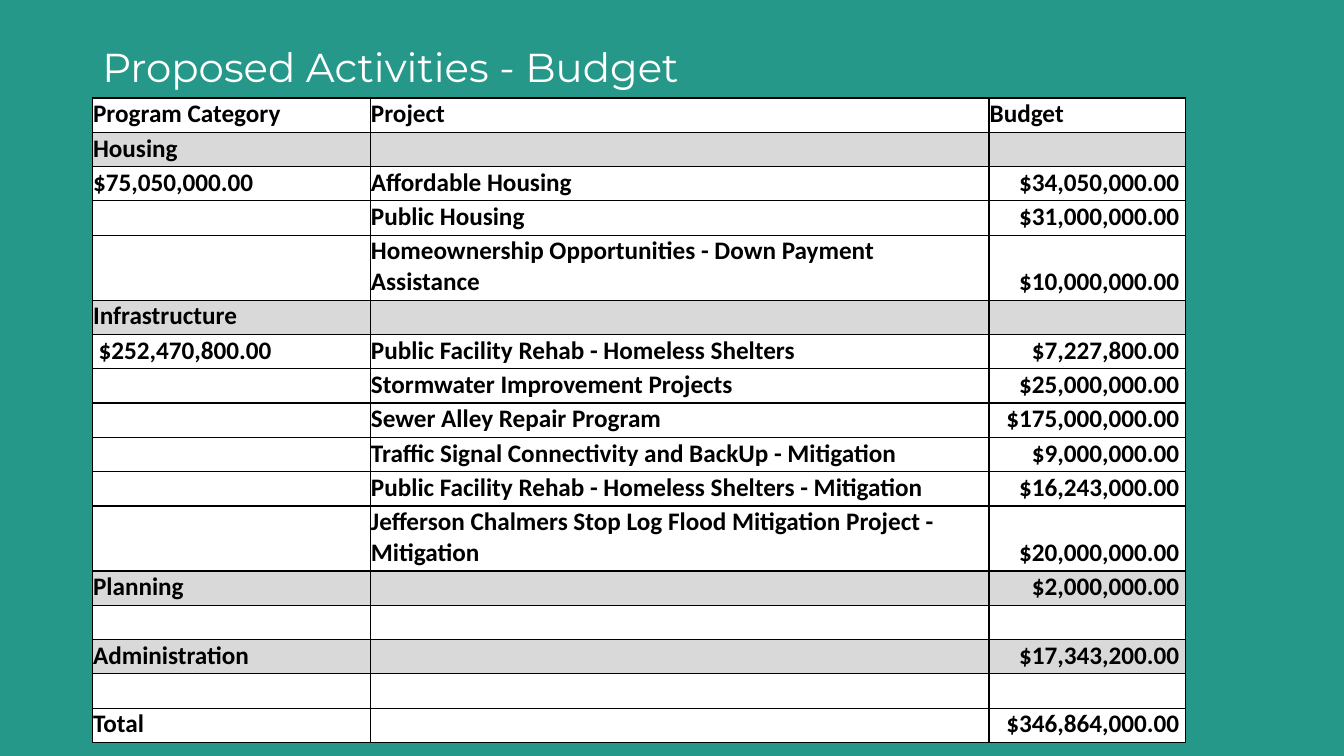
from lxml.etree import SubElement
from pptx import Presentation
from pptx.dml.color import RGBColor
from pptx.enum.text import MSO_ANCHOR as Anchor, MSO_AUTO_SIZE as AutoSize, PP_ALIGN as Align
from pptx.oxml.ns import qn
from pptx.util import Pt

EMU_PER_PX = 6350  # 1920 x 1080 px on a 13.33 x 7.5 inch slide
TEAL, WHITE, GREY, BLACK = "269889", "FFFFFF", "D9D9D9", "000000"

COLUMN_WIDTHS = (397, 884, 281)
LINE_ROW, TWO_LINE_ROW = 49, 93
TWO_LINE_ROWS = {4, 11}
SECTIONS = {"Housing", "Infrastructure", "Planning", "Administration"}
BUDGET = [
    ("Program Category", "Project", "Budget"),
    ("Housing", "", ""),
    ("$75,050,000.00", "Affordable Housing", "$34,050,000.00 "),
    ("", "Public Housing", "$31,000,000.00 "),
    ("", "Homeownership Opportunities - Down Payment Assistance", "$10,000,000.00 "),
    ("Infrastructure", "", ""),
    (" $252,470,800.00", "Public Facility Rehab - Homeless Shelters", "$7,227,800.00 "),
    ("", "Stormwater Improvement Projects", "$25,000,000.00 "),
    ("", "Sewer Alley Repair Program", "$175,000,000.00 "),
    ("", "Traffic Signal Connectivity and BackUp - Mitigation", "$9,000,000.00 "),
    ("", "Public Facility Rehab - Homeless Shelters - Mitigation", "$16,243,000.00 "),
    ("", "Jefferson Chalmers Stop Log Flood Mitigation Project - Mitigation", "$20,000,000.00 "),
    ("Planning", "", "$2,000,000.00 "),
    ("", "", ""),
    ("Administration", "", "$17,343,200.00 "),
    ("", "", ""),
    ("Total", "", "$346,864,000.00 "),
]


def px(length):
    return length * EMU_PER_PX


def color(hex_value):
    return RGBColor.from_string(hex_value)


class BudgetPage:
    def __init__(self, deck):
        self.title_font, self.table_font = "Montserrat", "Calibri"
        self.page = deck.slides.add_slide(deck.slide_layouts[5])
        self.page.background.fill.solid()
        self.page.background.fill.fore_color.rgb = color(TEAL)

    def style(self, font, name, size, hex_value, bold):
        font.name, font.size, font.bold = name, Pt(size), bold
        font.color.rgb = color(hex_value)

    def title(self, text, left, top, width, height):
        box = self.page.shapes.title
        box.left, box.top, box.width, box.height = map(px, (left, top, width, height))
        frame = box.text_frame
        frame.text = text
        frame.word_wrap, frame.auto_size = True, AutoSize.NONE
        frame.vertical_anchor = Anchor.MIDDLE
        para = frame.paragraphs[0]
        para.alignment, para.line_spacing = Align.LEFT, 0.9
        self.style(para.runs[0].font, self.title_font, 28.8, WHITE, False)

    def table(self, rows, left, top):
        heights = [TWO_LINE_ROW if index in TWO_LINE_ROWS else LINE_ROW
                   for index in range(len(rows))]
        table = self.page.shapes.add_table(
            len(rows), len(COLUMN_WIDTHS), px(left), px(top),
            px(sum(COLUMN_WIDTHS)), px(sum(heights))).table
        table.first_row = table.horz_banding = False
        for column, width in zip(table.columns, COLUMN_WIDTHS):
            column.width = px(width)
        for row, height, texts in zip(table.rows, heights, rows):
            row.height = px(height)
            fill = GREY if texts[0] in SECTIONS else WHITE
            for cell, text in zip(row.cells, texts):
                self.cell(cell, text, fill)
        for row in list(table.rows)[1:]:
            row.cells[2].text_frame.paragraphs[0].alignment = Align.RIGHT

    def cell(self, cell, text, fill):
        cell.margin_left = cell.margin_top = cell.margin_right = px(1)
        cell.margin_bottom = px(4)
        cell.vertical_anchor = Anchor.BOTTOM
        self.borders(cell)
        cell.fill.solid()
        cell.fill.fore_color.rgb = color(fill)
        cell.text_frame.text = text
        para = cell.text_frame.paragraphs[0]
        for span in para.runs:
            self.style(span.font, self.table_font, 18, BLACK, True)

    def borders(self, cell):
        properties = cell._tc.get_or_add_tcPr()
        for side in ("lnL", "lnR", "lnT", "lnB"):
            line = SubElement(properties, qn(f"a:{side}"), w=str(Pt(1)))
            solid = SubElement(line, qn("a:solidFill"))
            SubElement(solid, qn("a:srgbClr"), val=BLACK)


def main():
    deck = Presentation()
    deck.slide_width, deck.slide_height = px(1920), px(1080)
    page = BudgetPage(deck)
    page.title("Proposed Activities - Budget", 132, 58, 1656, 82)
    page.table(BUDGET, 132, 140)
    deck.save("out.pptx")


if __name__ == "__main__":
    main()
